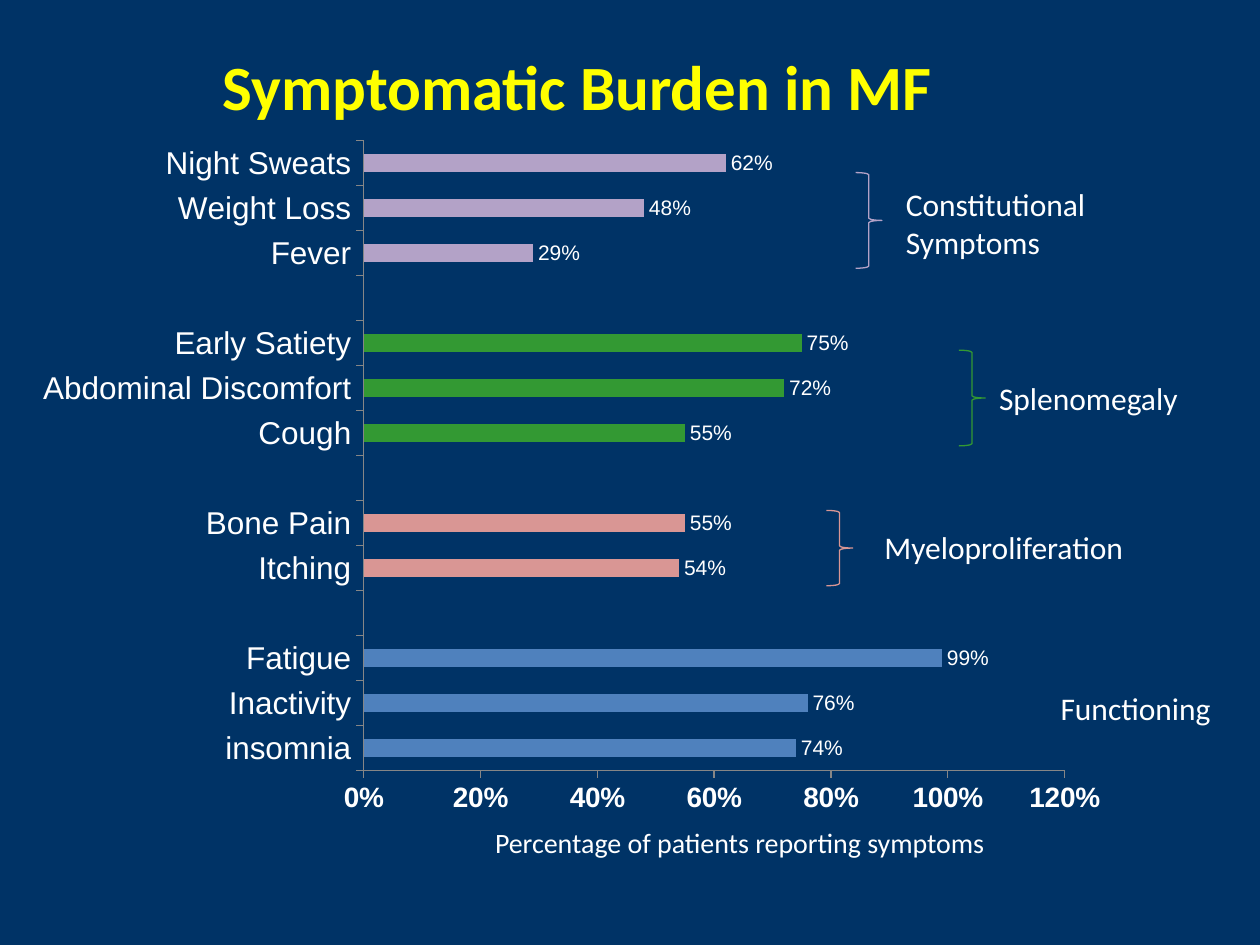
from lxml import etree
from pptx import Presentation
from pptx import util as u
from pptx.chart.data import CategoryChartData
from pptx.dml.color import RGBColor
from pptx.enum import chart as ch, shapes, text
from pptx.oxml import ns

WHITE, YELLOW, NAVY, GREY = "FFFFFF", "FFFF00", "003366", "868686"
LILAC, GREEN, ROSE, BLUE = "B3A2C7", "339933", "D99694", "4F81BD"

# Symptom groups from the bottom of the chart upwards
GROUPS = [
    (BLUE, [("insomnia", 0.74), ("Inactivity", 0.76), ("Fatigue", 0.99)]),
    (ROSE, [("Itching", 0.54), ("Bone Pain", 0.55)]),
    (GREEN, [("Cough", 0.55), ("Abdominal Discomfort", 0.72), ("Early Satiety", 0.75)]),
    (LILAC, [("Fever", 0.29), ("Weight Loss", 0.48), ("Night Sweats", 0.62)]),
]


def rgb(value):
    return RGBColor.from_string(value)


class Deck:
    font, chart_font = "Calibri", "Arial"

    def __init__(self, s):
        self.s = s

    def background(self, color):
        fill = self.s.background.fill
        fill.solid()
        fill.fore_color.rgb = rgb(color)

    def style(self, font, size, color=WHITE, bold=False, name=None):
        font.name, font.size, font.bold = name or self.font, u.Pt(size), bold
        font.color.rgb = rgb(color)

    def label(self, box, lines, size=18, color=WHITE, bold=False):
        tf = self.s.shapes.add_textbox(*map(u.Cm, box)).text_frame
        tf.word_wrap = False
        tf.auto_size = text.MSO_AUTO_SIZE.SHAPE_TO_FIT_TEXT
        for i, line in enumerate(lines):
            p = tf.add_paragraph() if i else tf.paragraphs[0]
            p.text = line
            self.style(p.font, size, color, bold)

    def brace(self, left, top, height, color):
        sp = self.s.shapes.add_shape(shapes.MSO_SHAPE.RIGHT_BRACE,
                                     u.Cm(left), u.Cm(top), u.Cm(0.53), u.Cm(height))
        sp.shadow.inherit = False
        sp.fill.background()
        sp.line.color.rgb = rgb(color)
        sp.line.width = u.Pt(0.75)

    def axis(self, axis, size, bold=False):
        axis.has_major_gridlines = False
        axis.major_tick_mark = ch.XL_TICK_MARK.OUTSIDE
        axis.minor_tick_mark = ch.XL_TICK_MARK.NONE
        axis.format.line.color.rgb = rgb(GREY)
        axis.format.line.width = u.Pt(0.75)
        self.style(axis.tick_labels.font, size, bold=bold, name=self.chart_font)

    def bar_chart(self, box, groups, plot):
        # One blank row separates neighbouring groups
        rows = []
        for color, items in groups:
            if rows:
                rows.append(("", None, None))
            rows += [(name, value, color) for name, value in items]
        data = CategoryChartData(number_format="0%")
        data.categories = [name for name, _, _ in rows]
        data.add_series("Series 1", [value for _, value, _ in rows])
        chart = self.s.shapes.add_chart(ch.XL_CHART_TYPE.BAR_CLUSTERED,
                                        *map(u.Cm, box), data).chart
        chart.has_legend = chart.has_title = False
        self.style(chart.font, 10, "000000")

        # Axes
        self.axis(chart.category_axis, 18)
        values = chart.value_axis
        self.axis(values, 16, bold=True)
        values.minimum_scale, values.maximum_scale, values.major_unit = 0, 1.2, 0.2
        values.tick_labels.number_format = "0%"
        values.tick_labels.number_format_is_linked = False

        # Bars and their values
        bars = chart.plots[0]
        bars.gap_width, bars.vary_by_categories = 150, False
        series = bars.series[0]
        series.format.fill.solid()
        series.format.fill.fore_color.rgb = rgb(BLUE)
        for i, (_, _, color) in enumerate(rows):
            if color and color != BLUE:
                fill = series.points[i].format.fill
                fill.solid()
                fill.fore_color.rgb = rgb(color)
        labels = series.data_labels
        labels.show_value = True
        labels.number_format, labels.number_format_is_linked = "0%", False
        labels.position = ch.XL_LABEL_POSITION.OUTSIDE_END
        self.style(labels.font, 12, name=self.chart_font)

        # Fixed inner plot area
        area = chart.element.find(".//" + ns.qn("c:plotArea"))
        for old in area.findall(ns.qn("c:layout")):
            area.remove(old)
        layout = etree.Element(ns.qn("c:layout"))
        manual = etree.SubElement(layout, ns.qn("c:manualLayout"))
        settings = [("layoutTarget", "inner"), ("xMode", "edge"), ("yMode", "edge")]
        for tag, value in settings + list(zip("xywh", plot)):
            etree.SubElement(manual, ns.qn("c:" + tag)).set("val", str(value))
        area.insert(0, layout)


def main():
    prs = Presentation()
    prs.slide_width, prs.slide_height = u.Cm(25.4), u.Cm(19.05)
    deck = Deck(prs.slides.add_slide(prs.slide_layouts[6]))
    deck.background(NAVY)

    # Chart, title and axis caption
    deck.bar_chart((0.2, 2.34, 22.22, 14.28), GROUPS, (0.321, 0.035, 0.636, 0.889))
    deck.label((4.24, 0.84, 14.99, 1.8), ["Symptomatic Burden in MF"], 36, YELLOW, True)
    deck.label((9.73, 16.51, 10.52, 0.94), ["Percentage of patients reporting symptoms"], 16)

    # Group braces
    deck.brace(17.25, 3.48, 1.93, LILAC)
    deck.brace(19.33, 7.06, 1.93, GREEN)
    deck.brace(16.66, 10.29, 1.52, ROSE)

    # Group names
    deck.label((18.01, 3.61, 4.19, 1.8), ["Constitutional", "Symptoms"])
    deck.label((19.89, 7.52, 4.17, 1.02), ["Splenomegaly"])
    deck.label((17.58, 10.52, 5.56, 1.02), ["Myeloproliferation"])
    deck.label((21.13, 13.77, 3.58, 1.02), ["Functioning"])

    prs.save("out.pptx")


if __name__ == "__main__":
    main()
